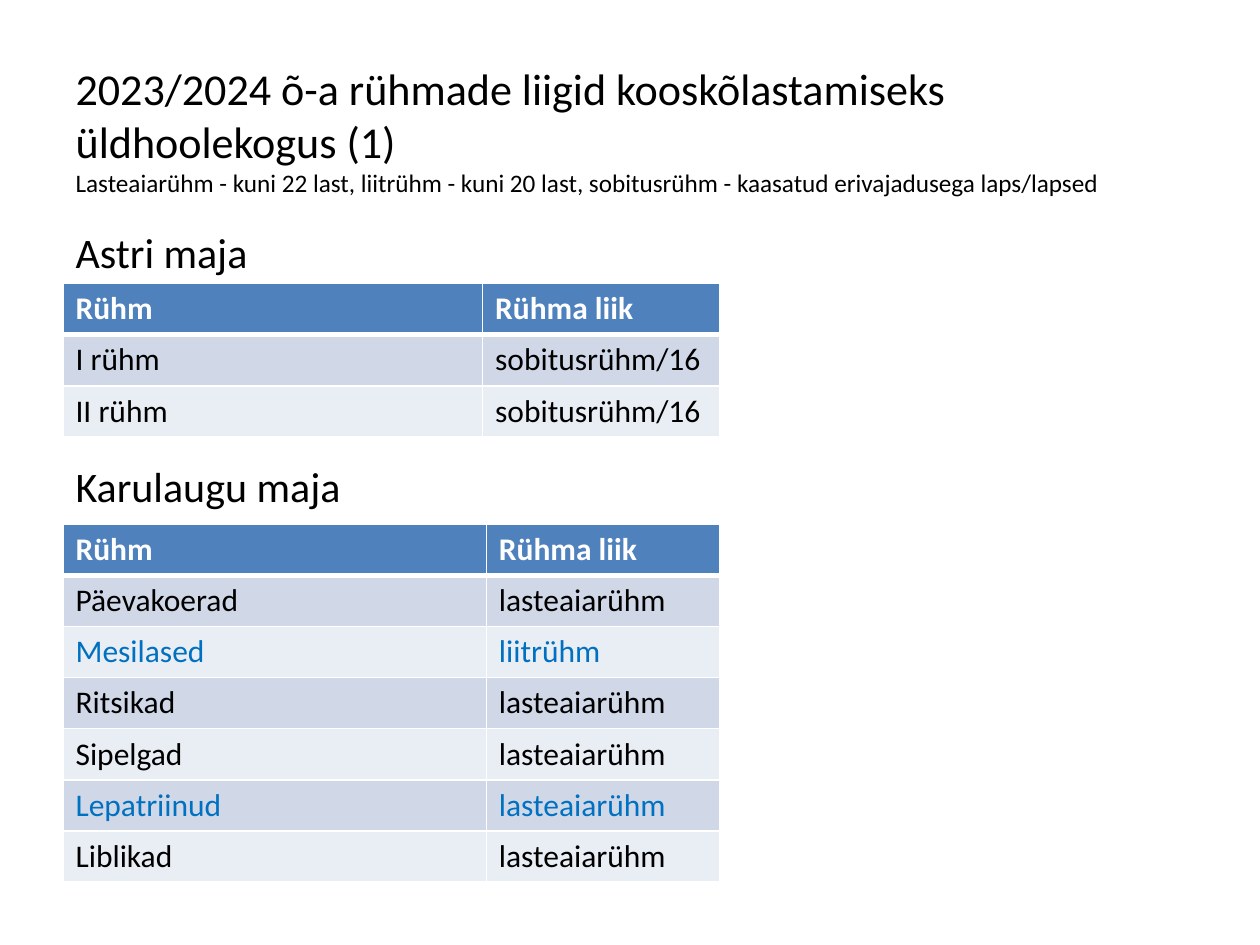
"""Build the slide of group types for two kindergarten houses."""
from lxml.etree import SubElement
from pptx import Presentation
from pptx.dml.color import RGBColor
from pptx.enum.text import MSO_ANCHOR, MSO_AUTO_SIZE, PP_ALIGN
from pptx.oxml.ns import qn
from pptx.util import Inches, Pt

WIDE, HIGH = 10, 7.5
LEFT, ROW = 0.5, 0.406
FONT, BLACK, WHITE, BLUE = "Calibri", "000000", "FFFFFF", "0070C0"
HEAD, BANDS = "4F81BD", ("D0D8E8", "E9EDF4")
TITLE = [
    ("2023/2024 õ-a rühmade liigid kooskõlastamiseks üldhoolekogus (1)", 25.2, 0),
    ("Lasteaiarühm - kuni 22 last, liitrühm - kuni 20 last, "
     "sobitusrühm - kaasatud erivajadusega laps/lapsed", 14.4, 0),
]
HOUSES = [("Astri maja", 24, 0), ("Karulaugu maja", 24, 105)]
NAMES = ("Rühm", "Rühma liik")
TABLES = [
    (2.25, (3.33, 1.88), [
        ("I rühm", "sobitusrühm/16"),
        ("II rühm", "sobitusrühm/16"),
    ]),
    (4.16, (3.36, 1.85), [
        ("Päevakoerad", "lasteaiarühm"),
        ("Mesilased", "liitrühm"),
        ("Ritsikad", "lasteaiarühm"),
        ("Sipelgad", "lasteaiarühm"),
        ("Lepatriinud", "lasteaiarühm"),
        ("Liblikad", "lasteaiarühm"),
    ]),
]
MARKED = {"Mesilased", "Lepatriinud"}


def color(code):
    return RGBColor.from_string(code)


def write(para, text, size, code=BLACK, bold=False):
    run = para.add_run()
    run.text = text
    font = run.font
    font.name, font.size, font.bold = FONT, Pt(size), bold
    font.color.rgb = color(code)


def fill_box(shape, box, lines, anchor):
    shape.left, shape.top, shape.width, shape.height = map(Inches, box)
    frame = shape.text_frame
    frame.word_wrap = True
    frame.auto_size = MSO_AUTO_SIZE.NONE
    frame.vertical_anchor = anchor
    for num, (text, size, gap) in enumerate(lines):
        para = frame.add_paragraph() if num else frame.paragraphs[0]
        props = para._p.get_or_add_pPr()
        props.set("marL", "0")
        props.set("indent", "0")
        SubElement(props, qn("a:buNone"))
        para.alignment = PP_ALIGN.LEFT
        para.space_before = Pt(gap)
        write(para, text, size)


def edge(cell, side, width):
    line = SubElement(cell._tc.get_or_add_tcPr(), qn(f"a:ln{side}"), w=str(Pt(width)))
    fill = SubElement(line, qn("a:solidFill"))
    SubElement(fill, qn("a:srgbClr"), val=WHITE)


def add_grid(slide, top, widths, groups):
    rows = [NAMES] + groups
    box = map(Inches, (LEFT, top, sum(widths), ROW * len(rows)))
    table = slide.shapes.add_table(len(rows), len(widths), *box).table
    for col, width in zip(table.columns, widths):
        col.width = Inches(width)
    for r, row in enumerate(rows):
        table.rows[r].height = Inches(ROW)
        shade = BANDS[(r - 1) % 2] if r else HEAD
        ink = BLUE if row[0] in MARKED else BLACK if r else WHITE
        for c, text in enumerate(row):
            cell = table.cell(r, c)
            for side in "LRTB":
                thick = (r, side) in ((0, "B"), (1, "T"))
                edge(cell, side, 3 if thick else 1)
            cell.fill.solid()
            cell.fill.fore_color.rgb = color(shade)
            write(cell.text_frame.paragraphs[0], text, 18, ink, r == 0)


def main():
    deck = Presentation()
    deck.slide_width, deck.slide_height = Inches(WIDE), Inches(HIGH)
    slide = deck.slides.add_slide(deck.slide_layouts[1])
    span = WIDE - 2 * LEFT
    fill_box(slide.shapes.title, (LEFT, 0.3, span, 1.45), TITLE, MSO_ANCHOR.MIDDLE)
    fill_box(slide.placeholders[1], (LEFT, 1.75, span, 4.95), HOUSES, MSO_ANCHOR.TOP)
    for top, widths, groups in TABLES:
        add_grid(slide, top, widths, groups)
    deck.save("out.pptx")


if __name__ == "__main__":
    main()
